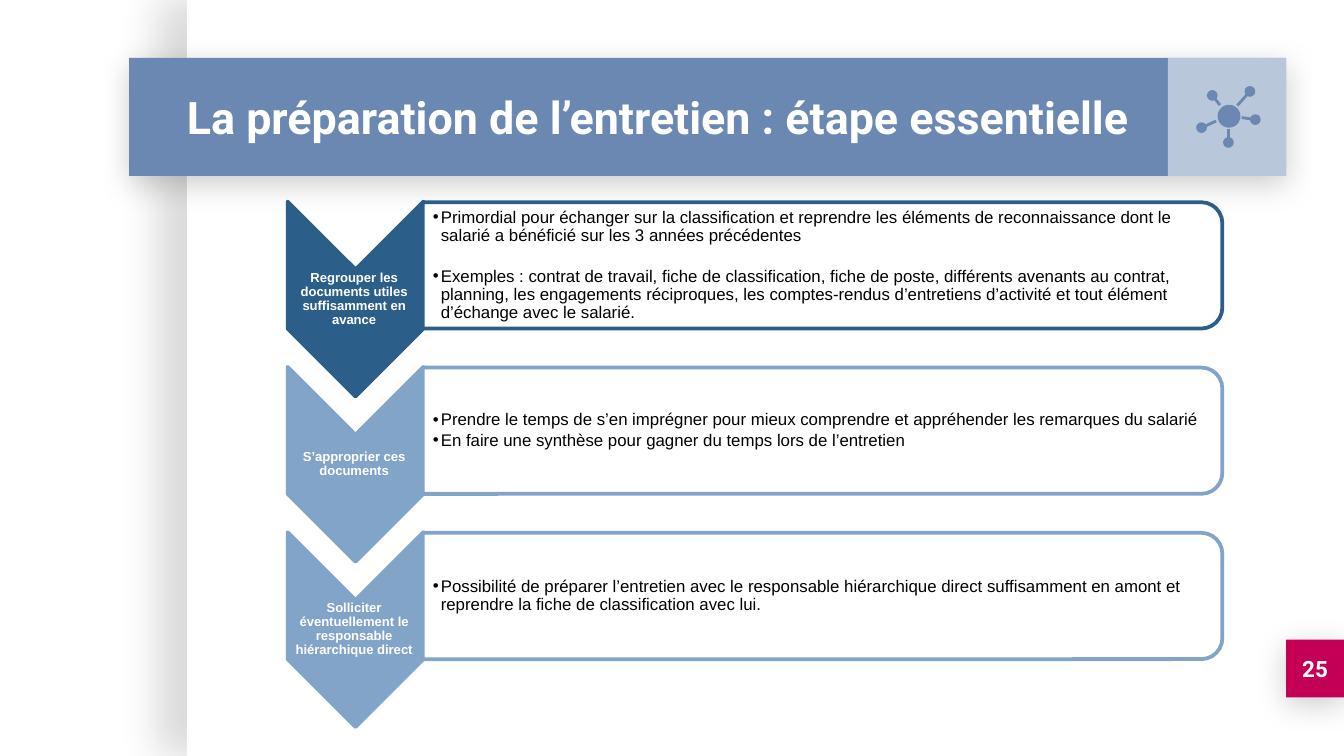
"""Build the slide on preparing the interview, with three steps and their details."""
from math import hypot

from lxml.etree import SubElement
from pptx import Presentation
from pptx.dml.color import RGBColor
from pptx.enum.shapes import MSO_CONNECTOR, MSO_SHAPE
from pptx.enum.text import MSO_ANCHOR, MSO_AUTO_SIZE, PP_ALIGN
from pptx.oxml.ns import qn
from pptx.util import Inches, Pt

WHITE = RGBColor(0xFF, 0xFF, 0xFF)
BLACK = RGBColor(0x00, 0x00, 0x00)
BANNER_BLUE = RGBColor(0x6A, 0x88, 0xB2)
DARK_BLUE = RGBColor(0x2B, 0x5F, 0x8A)
LIGHT_BLUE = RGBColor(0x83, 0xA4, 0xC9)
PINK = RGBColor(0xC4, 0x00, 0x56)

PANEL_SHADOW = (15, 22.5, 15, 180)
BLOCK_SHADOW = (20, 16.9, 3.8, 90)

STEPS = [
    (DARK_BLUE, "Regrouper les documents utiles suffisamment en avance", [
        "Primordial pour échanger sur la classification et reprendre les éléments de "
        "reconnaissance dont le salarié a bénéficié sur les 3 années précédentes",
        "Exemples : contrat de travail, fiche de classification, fiche de poste, différents "
        "avenants au contrat, planning, les engagements réciproques, les comptes-rendus "
        "d’entretiens d’activité et tout élément d’échange avec le salarié.",
    ], 10.8),
    (LIGHT_BLUE, "S’approprier ces documents", [
        "Prendre le temps de s’en imprégner pour mieux comprendre et appréhender les "
        "remarques du salarié",
        "En faire une synthèse pour gagner du temps lors de l’entretien",
    ], 0),
    (LIGHT_BLUE, "Solliciter éventuellement le responsable hiérarchique direct", [
        "Possibilité de préparer l’entretien avec le responsable hiérarchique direct "
        "suffisamment en amont et reprendre la fiche de classification avec lui.",
    ], 0),
]
STEP_PITCH = 1.23


def add_block(kind, left, top, width, height, color):
    shape = slide.shapes.add_shape(
        kind, Inches(left), Inches(top), Inches(width), Inches(height))
    shape.shadow.inherit = False
    shape.fill.solid()
    shape.fill.fore_color.rgb = color
    shape.line.fill.background()
    return shape


def write(shape, place, texts, margins, size, name, color, bold, align):
    shape.left, shape.top, shape.width, shape.height = [Inches(value) for value in place]
    frame = shape.text_frame
    frame.word_wrap = True
    frame.auto_size = MSO_AUTO_SIZE.NONE
    frame.vertical_anchor = MSO_ANCHOR.MIDDLE
    frame.margin_left = Inches(margins[0])
    frame.margin_top = frame.margin_right = frame.margin_bottom = Inches(margins[1])
    for index, text in enumerate(texts):
        paragraph = frame.add_paragraph() if index else frame.paragraphs[0]
        paragraph.alignment = align
        paragraph.space_before = Pt(0)
        run = paragraph.add_run()
        run.text = text
        run.font.size = Pt(size)
        run.font.name = name
        run.font.bold = bold
        run.font.color.rgb = color
    return frame.paragraphs


presentation = Presentation()
presentation.slide_width = Inches(10)
presentation.slide_height = Inches(10) * 9 // 16
slide = presentation.slides.add_slide(presentation.slide_layouts[4])
placeholders = list(slide.placeholders)

for place, color, shadow in [
    ((1.39, 0, 8.61, 5.63), WHITE, PANEL_SHADOW),
    ((9.57, 4.76, 0.43, 0.43), PINK, BLOCK_SHADOW),
    ((0.96, 0.43, 8.61, 0.88), BANNER_BLUE, BLOCK_SHADOW),
]:
    block = add_block(MSO_SHAPE.RECTANGLE, *place, color)
    opacity, blur, distance, angle = shadow
    effects = block._element.spPr.find(qn("a:effectLst"))
    outer = SubElement(
        effects, qn("a:outerShdw"), blurRad=str(Pt(blur)), dist=str(Pt(distance)),
        dir=str(angle * 60000), algn="bl", rotWithShape="0")
    shade = SubElement(outer, qn("a:srgbClr"), val=str(BLACK))
    SubElement(shade, qn("a:alpha"), val=str(opacity * 1000))

icon_tile = add_block(MSO_SHAPE.RECTANGLE, 8.69, 0.43, 0.88, 0.88, WHITE)
tile_color = icon_tile._element.spPr.find(qn("a:solidFill")).find(qn("a:srgbClr"))
SubElement(tile_color, qn("a:alpha"), val="53000")

title = slide.shapes.title
slide.shapes._spTree.append(title._element)
write(title, (1.29, 0.43, 7.37, 0.88), ["La préparation de l’entretien : étape essentielle"],
      (0.1, 0.1), 24, "Roboto", WHITE, True, PP_ALIGN.LEFT)

page_number = slide.shapes.add_textbox(0, 0, 0, 0)
write(page_number, (9.57, 4.76, 0.43, 0.43), ["25"],
      (0.1, 0.1), 12, "Roboto", WHITE, True, PP_ALIGN.CENTER)

hub_x, hub_y = 9.14, 0.86
for node_x, node_y in [(9.3, 0.68), (9.02, 0.71), (8.94, 0.95), (9.14, 1.06), (9.34, 0.89)]:
    gap = 0.1 / hypot(node_x - hub_x, node_y - hub_y)
    link = slide.shapes.add_connector(
        MSO_CONNECTOR.STRAIGHT,
        Inches(hub_x + gap * (node_x - hub_x)), Inches(hub_y + gap * (node_y - hub_y)),
        Inches(node_x), Inches(node_y))
    link.line.color.rgb = BANNER_BLUE
    link.line.width = Pt(1.5)
    SubElement(link._element.spPr, qn("a:effectLst"))
    add_block(MSO_SHAPE.OVAL, node_x - 0.04, node_y - 0.04, 0.08, 0.08, BANNER_BLUE)
add_block(MSO_SHAPE.OVAL, hub_x - 0.08, hub_y - 0.08, 0.17, 0.17, BANNER_BLUE)

for index, (color, label, details, detail_gap) in enumerate(STEPS):
    offset = index * STEP_PITCH
    chevron = add_block(MSO_SHAPE.CHEVRON, 1.92, 1.72 + offset, 1.45, 1.01, color)
    detail_box = add_block(
        MSO_SHAPE.ROUND_2_SAME_RECTANGLE, 5.65, -1 + offset, 0.94, 5.95, WHITE)
    for shape in (chevron, detail_box):
        shape.rotation = 90
        shape.line.color.rgb = color
        shape.line.width = Pt(2)

    label_box = slide.shapes.add_textbox(0, 0, 0, 0)
    label_paragraphs = write(
        label_box, (2.13, 2.01 + offset, 1.01, 0.43), [label],
        (0, 0), 7, "Arial", WHITE, True, PP_ALIGN.CENTER)
    label_paragraphs[0].line_spacing = 0.9

    detail_list = placeholders[index + 1]
    slide.shapes._spTree.append(detail_list._element)
    detail_paragraphs = write(
        detail_list, (3.15, 1.55 + offset, 5.9, 0.85), details,
        (0.07, 0.01), 9, "Arial", BLACK, False, PP_ALIGN.LEFT)
    for position, paragraph in enumerate(detail_paragraphs):
        properties = paragraph._p.get_or_add_pPr()
        properties.set("marL", str(Inches(0.06)))
        properties.set("indent", str(Inches(-0.06)))
        SubElement(properties, qn("a:buFont"), typeface="Arial")
        SubElement(properties, qn("a:buChar"), char="•")
        paragraph.line_spacing = 0.9
        paragraph.space_before = Pt(detail_gap if position else 0)
        paragraph.space_after = Pt(1.4)

unused = placeholders[4]._element
unused.getparent().remove(unused)

presentation.save("out.pptx")
